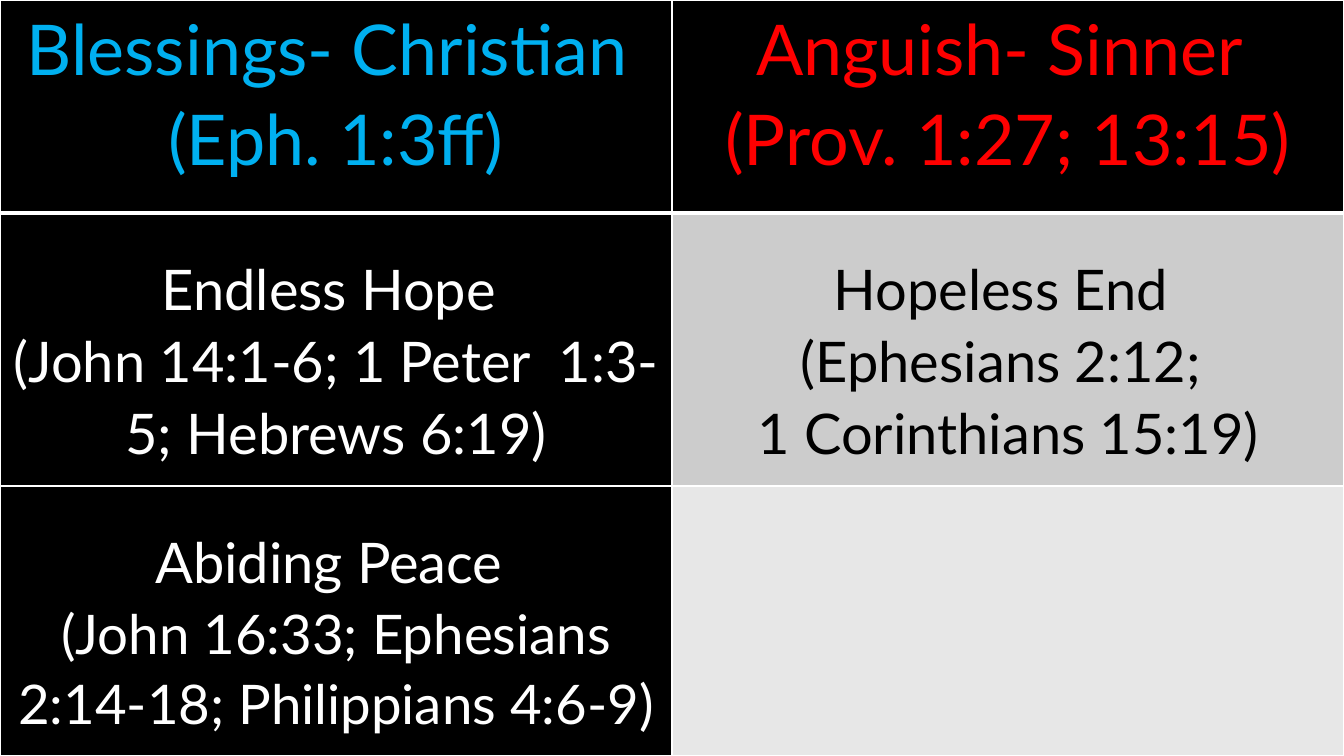
from dataclasses import dataclass

from lxml.etree import SubElement
from pptx import Presentation
from pptx.dml.color import RGBColor
from pptx.enum.text import PP_ALIGN
from pptx.oxml.ns import qn
from pptx.util import Emu, Pt

EMU_PER_PX = 914400 / 100.8
SLIDE_WIDTH, SLIDE_HEIGHT = 1344, 756
COLUMN_WIDTH = SLIDE_WIDTH // 2
ROW_HEIGHTS = (213, 273, 270)
SIDE_MARGIN = 7
BODY_TOP_MARGIN = 38


@dataclass(frozen=True)
class Theme:
    font: str = "Lato"
    black: str = "000000"
    white: str = "FFFFFF"
    blessing: str = "00B0F0"
    anguish: str = "FF0000"
    gray: str = "CCCCCC"
    light_gray: str = "E7E7E7"
    header_size: int = 50
    body_size: int = 40
    tight_size: int = 39
    line_spacing: float = 1.07
    thin_border: int = 1
    thick_border: int = 3


@dataclass(frozen=True)
class CellContent:
    fill: str
    color: str = Theme.white
    lines: tuple = ()
    sizes: tuple = ()


THEME = Theme()
HEADER_SIZES = (THEME.header_size,) * 2
BODY_SIZES = (THEME.body_size,) * 3

ROWS = (
    (
        CellContent(THEME.black, THEME.blessing,
                    ("Blessings- Christian ", "(Eph. 1:3ff)"), HEADER_SIZES),
        CellContent(THEME.black, THEME.anguish,
                    ("Anguish- Sinner ", "(Prov. 1:27; 13:15)"), HEADER_SIZES),
    ),
    (
        CellContent(THEME.black, THEME.white,
                    ("Endless Hope ", "(John 14:1-6; 1 Peter  1:3-5; Hebrews 6:19)"),
                    BODY_SIZES),
        CellContent(THEME.gray, THEME.black,
                    ("Hopeless End ", "(Ephesians 2:12; ", "1 Corinthians 15:19)"),
                    BODY_SIZES),
    ),
    (
        CellContent(THEME.black, THEME.white,
                    ("Abiding Peace ",
                     "(John 16:33; Ephesians 2:14-18; Philippians 4:6-9)"),
                    (THEME.body_size, THEME.tight_size)),
        CellContent(THEME.light_gray),
    ),
)


def px(length):
    return Emu(round(length * EMU_PER_PX))


def set_borders(cell, top, bottom):
    """Draw white borders; must run before the fill, which follows them in the XML."""
    properties = cell._tc.get_or_add_tcPr()
    widths = {"a:lnL": THEME.thin_border, "a:lnR": THEME.thin_border,
              "a:lnT": top, "a:lnB": bottom}
    for tag, width in widths.items():
        line = SubElement(properties, qn(tag), w=str(Pt(width)))
        fill = SubElement(line, qn("a:solidFill"))
        SubElement(fill, qn("a:srgbClr"), val=THEME.white)


def write_lines(cell, content):
    frame = cell.text_frame
    frame.text = "\n".join(content.lines)
    for paragraph, size in zip(frame.paragraphs, content.sizes):
        paragraph.alignment = PP_ALIGN.CENTER
        paragraph.line_spacing = THEME.line_spacing
        paragraph.font.name = THEME.font
        paragraph.font.size = Pt(size)
        paragraph.font.bold = False
        paragraph.font.color.rgb = RGBColor.from_string(content.color)


def fill_cell(cell, content, row_index):
    set_borders(cell,
                top=THEME.thick_border if row_index == 1 else THEME.thin_border,
                bottom=THEME.thick_border if row_index == 0 else THEME.thin_border)
    cell.fill.solid()
    cell.fill.fore_color.rgb = RGBColor.from_string(content.fill)
    cell.margin_left = cell.margin_right = px(SIDE_MARGIN)
    cell.margin_top = px(BODY_TOP_MARGIN if row_index else 0)
    cell.margin_bottom = 0
    if content.lines:
        write_lines(cell, content)


def add_comparison_table(slide):
    table = slide.shapes.add_table(len(ROWS), 2, 0, 0,
                                   px(SLIDE_WIDTH), px(SLIDE_HEIGHT)).table
    for column in table.columns:
        column.width = px(COLUMN_WIDTH)
    for row_index, contents in enumerate(ROWS):
        table.rows[row_index].height = px(ROW_HEIGHTS[row_index])
        for column_index, content in enumerate(contents):
            fill_cell(table.cell(row_index, column_index), content, row_index)


def main():
    presentation = Presentation()
    presentation.slide_width = px(SLIDE_WIDTH)
    presentation.slide_height = px(SLIDE_HEIGHT)
    slide = presentation.slides.add_slide(presentation.slide_layouts[6])
    slide.background.fill.solid()
    slide.background.fill.fore_color.rgb = RGBColor.from_string(THEME.black)
    add_comparison_table(slide)
    presentation.save("out.pptx")


if __name__ == "__main__":
    main()
